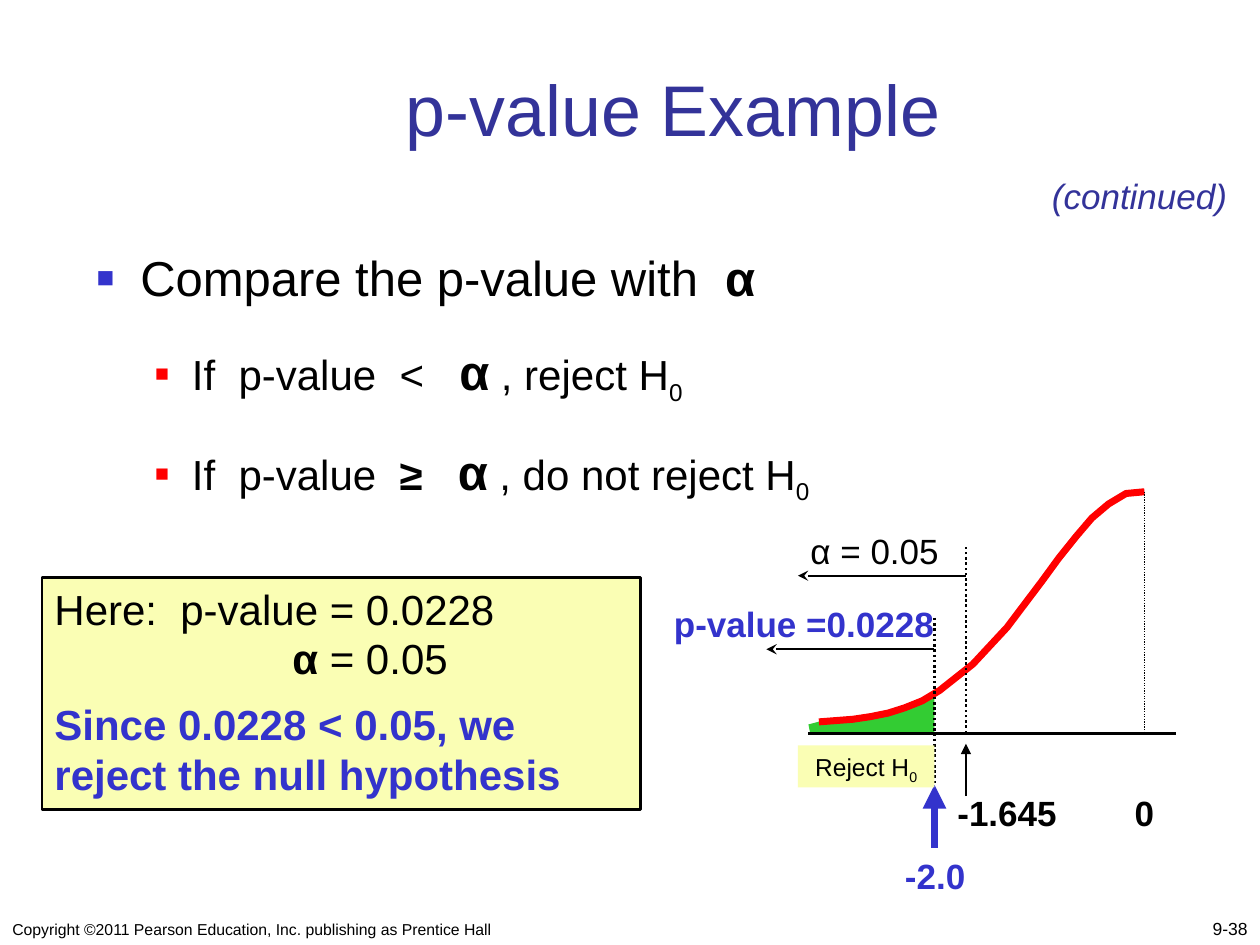
from dataclasses import dataclass

from lxml import etree
from pptx import Presentation
from pptx import util as u
from pptx.dml.color import RGBColor
from pptx.enum import dml, shapes, text
from pptx.oxml.ns import qn

Pt = u.Pt
LEFT, CENTER, RIGHT = text.PP_ALIGN.LEFT, text.PP_ALIGN.CENTER, text.PP_ALIGN.RIGHT
BOTTOM = text.MSO_ANCHOR.BOTTOM


@dataclass(frozen=True)
class Theme:
    face: str = "Arial"
    ink: str = "000000"
    heading: str = "333399"
    accent: str = "3333CC"
    red: str = "FF0000"
    green: str = "33CC33"
    cream: str = "FAFEB4"
    title: float = 41
    lead: float = 28
    point: float = 24
    label: float = 20
    region: float = 14
    page: float = 10
    legal: float = 9


class SlideBuilder:
    """Holds the theme and the current slide; one method per kind of element."""

    def __init__(self, slide, theme):
        self.slide, self.theme = slide, theme

    def place(self, shape, left, top, width, height):
        shape.left, shape.top = Pt(left), Pt(top)
        shape.width, shape.height = Pt(width), Pt(height)

    def bullet(self, paragraph, color, percent, margin, hanging):
        props = paragraph._p.get_or_add_pPr()
        props.set("marL", str(Pt(margin)))
        props.set("indent", str(Pt(-hanging)))
        tint = etree.SubElement(props, qn("a:buClr"))
        etree.SubElement(tint, qn("a:srgbClr"), val=color)
        etree.SubElement(props, qn("a:buSzPct"), val=str(percent * 1000))
        etree.SubElement(props, qn("a:buFont"), typeface=self.theme.face)
        etree.SubElement(props, qn("a:buChar"), char="■")

    def compose(self, paragraph, runs, size, color=None, bold=False, italic=False,
                align=LEFT, before=0):
        """Each run is a string, or a (string, changes) pair."""
        paragraph.alignment = align
        paragraph.space_before = Pt(before)
        font = paragraph.font
        font.name, font.size, font.bold, font.italic = self.theme.face, Pt(size), bold, italic
        font.color.rgb = RGBColor.from_string(color or self.theme.ink)
        for item in [runs] if isinstance(runs, str) else runs:
            wording, changes = (item, {}) if isinstance(item, str) else item
            run = paragraph.add_run()
            run.text = wording
            if "bold" in changes:
                run.font.bold = changes["bold"]
            if "size" in changes:
                run.font.size = Pt(changes["size"])
            if changes.get("sub"):
                run._r.get_or_add_rPr().set("baseline", "-25000")

    def label(self, box, runs, size, anchor=None, wrap=True, **style):
        area = self.slide.shapes.add_textbox(*map(Pt, box))
        frame = area.text_frame
        frame.word_wrap = wrap
        if anchor is not None:
            frame.vertical_anchor = anchor
        self.compose(frame.paragraphs[0], runs, size, **style)

    def panel(self, box, fill, outline=None):
        shape = self.slide.shapes.add_shape(shapes.MSO_SHAPE.RECTANGLE, *map(Pt, box))
        self.paint(shape, fill, outline, 1.5)
        shape.text_frame.word_wrap = True
        shape.text_frame.vertical_anchor = text.MSO_ANCHOR.TOP
        return shape.text_frame

    def paint(self, shape, fill=None, outline=None, weight=1):
        shape.shadow.inherit = False
        if fill:
            shape.fill.solid()
            shape.fill.fore_color.rgb = RGBColor.from_string(fill)
        else:
            shape.fill.background()
        if outline:
            shape.line.color.rgb = RGBColor.from_string(outline)
            shape.line.width = Pt(weight)
        else:
            shape.line.fill.background()

    def outline(self, points, closed, **look):
        corners = [(Pt(x), Pt(y)) for x, y in points]
        builder = self.slide.shapes.build_freeform(*corners[0])
        builder.add_line_segments(corners[1:], close=closed)
        self.paint(builder.convert_to_shape(), **look)

    def line(self, start, end, weight, color=None, dotted=False, arrow=None):
        link = self.slide.shapes.add_connector(
            shapes.MSO_CONNECTOR.STRAIGHT, *map(Pt, start + end))
        link.line.color.rgb = RGBColor.from_string(color or self.theme.ink)
        link.line.width = Pt(weight)
        if dotted:
            link.line.dash_style = dml.MSO_LINE.ROUND_DOT
        if arrow:
            etree.SubElement(link.line._get_or_add_ln(), qn("a:tailEnd"), type=arrow)
        etree.SubElement(link._element.spPr, qn("a:effectLst"))


def main():
    theme = Theme()
    deck = Presentation()
    deck.slide_width, deck.slide_height = Pt(720), Pt(540)
    slide = deck.slides.add_slide(deck.slide_layouts[1])
    page = SlideBuilder(slide, theme)
    heading, rules = slide.placeholders

    # Footer
    page.label((0, 516, 366, 24),
               "Copyright ©2011 Pearson Education, Inc. publishing as Prentice Hall",
               theme.legal, anchor=BOTTOM)
    page.label((570, 515.5, 150, 24.5), "9-38", theme.page, anchor=BOTTOM, align=RIGHT)

    # Title
    page.place(heading, 78, 30, 613.5, 60)
    heading.text_frame.vertical_anchor = BOTTOM
    page.compose(heading.text_frame.paragraphs[0], "p-value Example", theme.title,
                 color=theme.heading, align=CENTER)
    page.label((594, 96, 116, 31), "(continued)", theme.label, wrap=False,
               color=theme.heading, italic=True)

    # Decision rules
    page.place(rules, 48, 138, 474, 162)
    frame = rules.text_frame
    frame.auto_size = text.MSO_AUTO_SIZE.NONE
    alpha = ("α", {"bold": True, "size": theme.lead})
    zero = ("0", {"sub": True})
    lead = frame.paragraphs[0]
    page.bullet(lead, theme.accent, 60, 25, 25)
    page.compose(lead, ["Compare the p-value with  ", alpha], theme.lead)
    for condition, verdict in (
        (["If  p-value  <   "], " , reject H"),
        (["If  p-value  ", ("≥   ", {"bold": True})], " , do not reject H"),
    ):
        rule = frame.add_paragraph()
        rule.level = 1
        page.bullet(rule, theme.red, 55, 54.5, 21)
        page.compose(rule, condition + [alpha, verdict, zero], theme.point, before=20)

    # Conclusion panel
    frame = page.panel((24, 330, 342, 132.5), theme.cream, theme.ink)
    page.compose(frame.paragraphs[0], "Here: \tp-value = 0.0228", theme.point)
    level = frame.add_paragraph()
    level.line_spacing = 0.3
    level._p.get_or_add_pPr().set("marL", str(Pt(136)))
    page.compose(level, [("α", {"bold": True}), " = 0.05"], theme.point, before=16)
    page.compose(frame.add_paragraph(), "Since 0.0228 < 0.05, we reject the null hypothesis",
                 theme.point, color=theme.accent, bold=True, before=12)

    # Lower half of the distribution
    statistic, critical, mean, axis = 534, 552, 654, 419
    page.outline([(463, axis), (462, 414), (469.5, 412), (492, 412), (515.5, 404.5),
                  (statistic, 396.5), (statistic, axis)], closed=True, fill=theme.green)
    page.outline([(468, 412.5), (487.5, 411), (497.5, 409.5), (507.5, 407.5), (517, 404.5),
                  (527, 400.5), (537, 394.5), (556, 379.5), (575.5, 358.5), (595.5, 332),
                  (605, 319), (615, 306.5), (624, 296), (633.5, 288), (643.5, 282),
                  (mean, 281)], closed=False, outline=theme.red, weight=4)
    page.line((mean, 281), (mean, axis), 0.75, dotted=True)
    page.line((critical, axis), (critical, 311), 1.5, dotted=True)
    page.line((statistic, 353), (statistic, 448.5), 1.5, dotted=True)
    page.line((462, axis), (672, axis), 1.5)

    # Tail areas
    for edge, height in ((critical, 329), (statistic, 371)):
        page.line((edge, height), (edge - 96, height), 1, arrow="stealth")
    page.label((378, 340.5, 168, 31), "p-value =0.0228", theme.label,
               color=theme.accent, bold=True)
    page.label((456, 299, 102, 31), "α = 0.05", theme.label)

    # Axis values and pointers
    page.line((statistic, 484.5), (statistic, 448.5), 4.5, theme.accent, arrow="triangle")
    page.line((critical, 455), (critical, 425), 1.5, arrow="triangle")
    page.label((540, 448.5, 78, 31), "-1.645", theme.label, bold=True)
    page.label((636, 448.5, 36, 31), "0", theme.label, bold=True, align=CENTER)
    page.label((510, 484.5, 54, 31), "-2.0", theme.label, color=theme.accent, bold=True)

    # Rejection region
    frame = page.panel((456, 426, 78, 24), theme.cream)
    page.compose(frame.paragraphs[0], ["Reject H", zero], theme.region, align=CENTER)

    deck.save("out.pptx")


if __name__ == "__main__":
    main()
